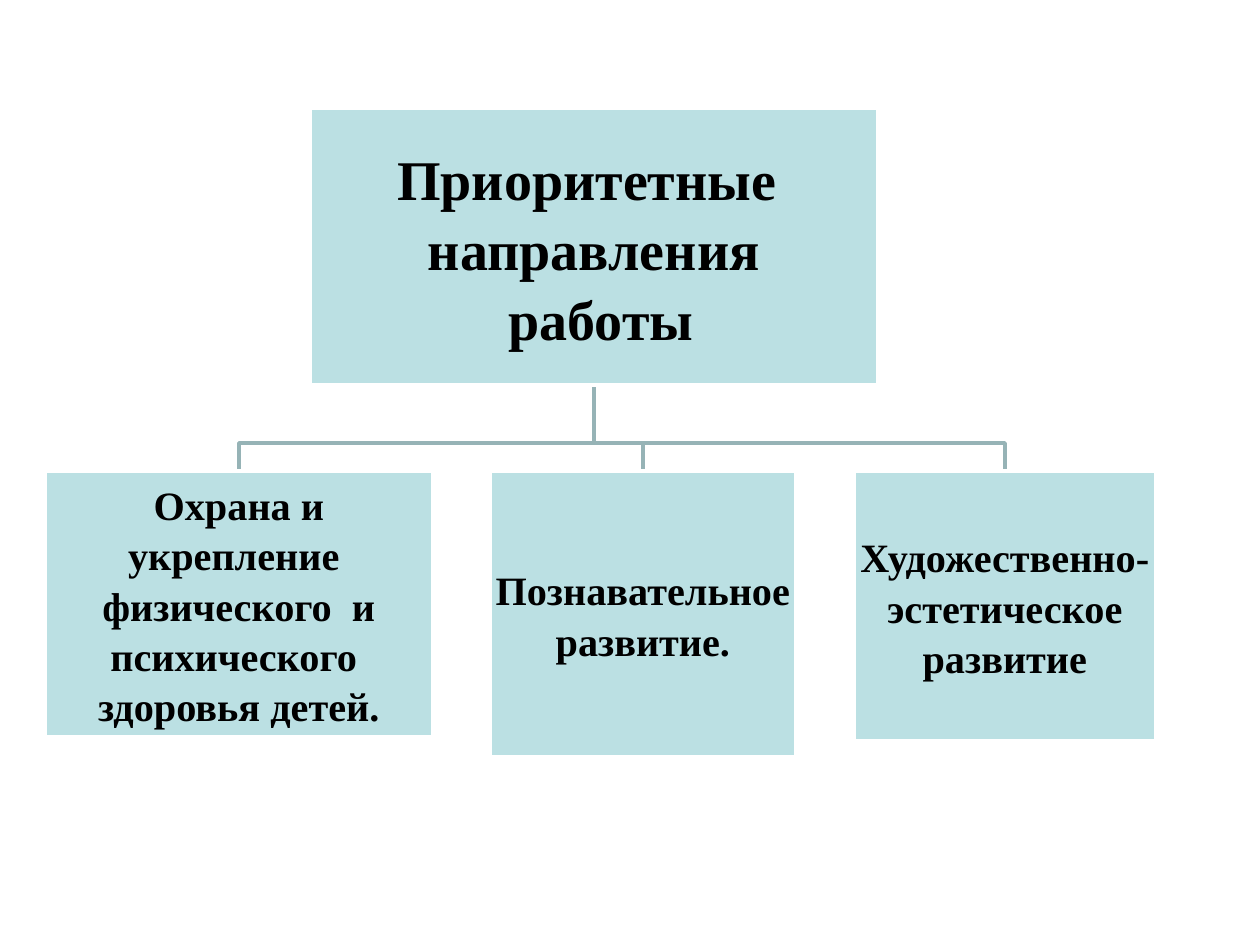
from pptx import Presentation
from pptx.dml.color import RGBColor
from pptx.enum.shapes import MSO_SHAPE
from pptx.enum.text import MSO_ANCHOR, PP_ALIGN
from pptx.util import Pt

EMU_PER_PX = 914400 / 126
COLORS = {"box": "BBE0E3", "edge": "FFFFFF", "branch": "96B3B6", "text": "000000"}
FONT = "Times New Roman"
ROOT = (310, 108, 568, 277)
ROOT_LINES = ["Приоритетные ", "направления", " работы"]
BUS_Y = 443
CHILD_TOP = 471
CHILDREN = [
    (45, 388, 266, ["Охрана и укрепление ", "физического  и", "психического ", "здоровья детей."]),
    (490, 306, 286, ["Познавательное ", "развитие."]),
    (854, 302, 270, ["Художественно-эстетическое развитие"]),
]


def px(n):
    return round(n * EMU_PER_PX)


def rgb(name):
    return RGBColor.from_string(COLORS[name])


def write(p, text, size=23, bold=True, color="text", spacing=1.04):
    p.alignment = PP_ALIGN.CENTER
    p.line_spacing = spacing
    r = p.add_run()
    r.text = text
    r.font.name = FONT
    r.font.size = Pt(size)
    r.font.bold = bold
    r.font.color.rgb = rgb(color)


class OrgChart:
    """Draws boxes and branches in one style on the current slide."""

    def __init__(self, s):
        self.s = s

    def outline(self, sp, color):
        sp.shadow.inherit = False
        sp.line.color.rgb = rgb(color)
        sp.line.width = Pt(2)

    def branch(self, points):
        start, *rest = points
        builder = self.s.shapes.build_freeform(*start, scale=EMU_PER_PX)
        builder.add_line_segments(rest, close=False)
        sp = builder.convert_to_shape()
        sp.fill.background()
        self.outline(sp, "branch")

    def box(self, x, y, w, h, lines, size=23):
        sp = self.s.shapes.add_shape(MSO_SHAPE.RECTANGLE, px(x), px(y), px(w), px(h))
        sp.fill.solid()
        sp.fill.fore_color.rgb = rgb("box")
        self.outline(sp, "edge")
        tf = sp.text_frame
        tf.word_wrap = True
        tf.vertical_anchor = MSO_ANCHOR.MIDDLE
        tf.margin_left = tf.margin_right = tf.margin_top = tf.margin_bottom = px(2)
        for i, text in enumerate(lines):
            p = tf.add_paragraph() if i else tf.paragraphs[0]
            write(p, text, size=size)


def main():
    prs = Presentation()
    prs.slide_width, prs.slide_height = px(1260), px(945)
    chart = OrgChart(prs.slides.add_slide(prs.slide_layouts[6]))
    x, y, w, h = ROOT
    trunk = x + w // 2
    for left, width, _, _ in reversed(CHILDREN):
        middle = left + width // 2
        chart.branch([(trunk, y + h), (trunk, BUS_Y), (middle, BUS_Y), (middle, CHILD_TOP)])
    chart.box(*ROOT, ROOT_LINES, size=32)
    for left, width, height, lines in CHILDREN:
        chart.box(left, CHILD_TOP, width, height, lines)
    prs.save("out.pptx")


if __name__ == "__main__":
    main()
